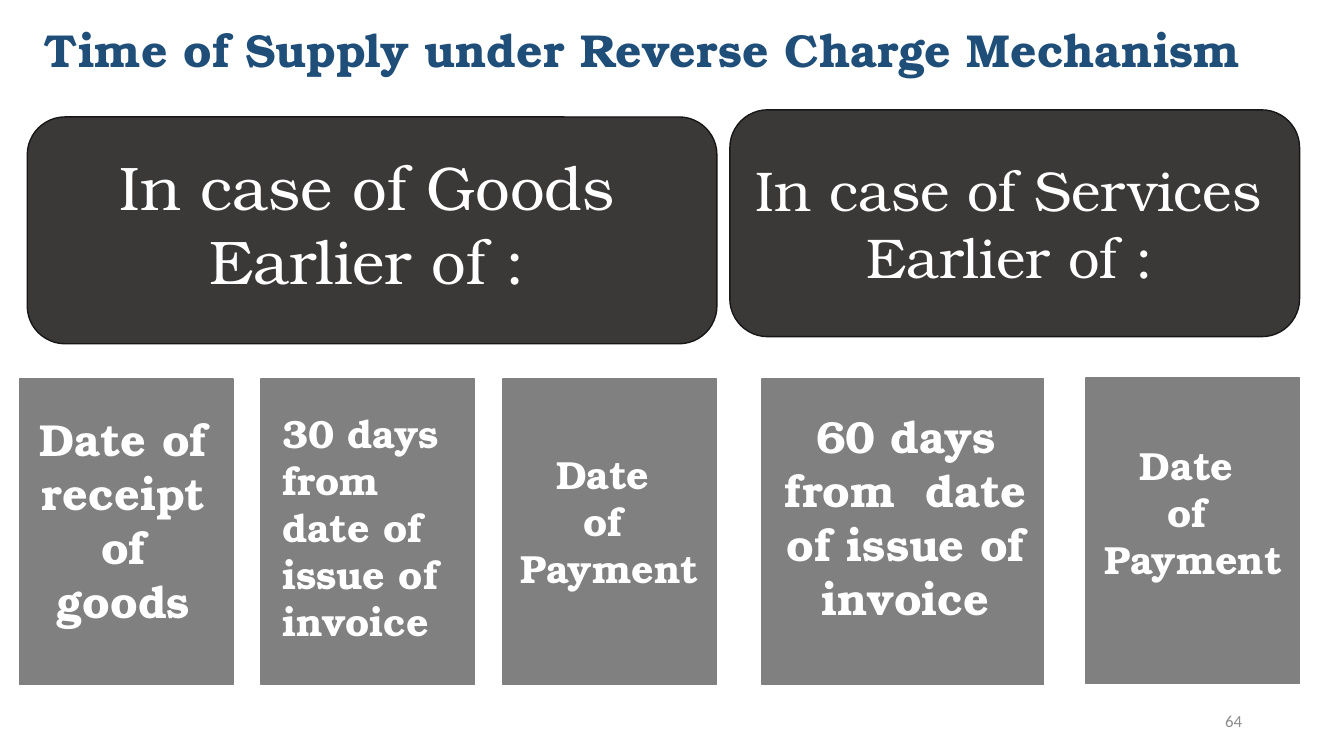
"""Builds a slide on the time of supply under the reverse charge mechanism."""
from dataclasses import dataclass

from pptx import Presentation
from pptx import util as u
from pptx.dml.color import RGBColor
from pptx.enum import shapes, text


@dataclass(frozen=True)
class Theme:
    """Colours, fonts and type sizes of the slide."""
    serif: str = "TeX Gyre Bonum"
    sans: str = "Calibri"
    title: str = "1F4E79"
    light: str = "FFFFFF"
    muted: str = "8C8C8C"
    banner: str = "3B3838"
    banner_edge: str = "181717"
    card: str = "808080"
    title_size: int = 33
    goods_size: int = 44
    services_size: int = 40
    large: int = 32
    medium: int = 28
    small: int = 12


LEFT, CENTER, RIGHT = text.PP_ALIGN.LEFT, text.PP_ALIGN.CENTER, text.PP_ALIGN.RIGHT
TOP, MIDDLE = text.MSO_ANCHOR.TOP, text.MSO_ANCHOR.MIDDLE


class SlideBuilder:
    """Places styled elements by percentages of the slide's size."""

    def __init__(self, deck, theme):
        """Adds a title-only slide to the deck."""
        self.deck, self.theme = deck, theme
        self.slide = deck.slides.add_slide(deck.slide_layouts[5])

    def box(self, left, top, width, height):
        """Turns percentages into slide lengths."""
        across, down = self.deck.slide_width / 100, self.deck.slide_height / 100
        return [int(n) for n in (left * across, top * down, width * across, height * down)]

    def set_words(self, shape, words, size, color, bold=False, align=CENTER, font=None,
                  anchor=TOP):
        """Fills a shape with paragraphs in one style."""
        frame = shape.text_frame
        frame.text = words
        frame.word_wrap = True
        frame.auto_size = text.MSO_AUTO_SIZE.NONE
        frame.vertical_anchor = anchor
        for paragraph in frame.paragraphs:
            paragraph.alignment = align
            paragraph.font.name = font or self.theme.serif
            paragraph.font.size = u.Pt(size)
            paragraph.font.bold = bold
            paragraph.font.color.rgb = RGBColor.from_string(color)
        return frame

    def title(self, place, words):
        """Moves and formats the title placeholder."""
        heading = self.slide.shapes.title
        heading.left, heading.top, heading.width, heading.height = self.box(*place)
        self.set_words(heading, words, self.theme.title_size, self.theme.title, bold=True)

    def panel(self, kind, place, fill, edge):
        """Draws a filled and outlined panel."""
        panel = self.slide.shapes.add_shape(kind, *self.box(*place))
        panel.shadow.inherit = False
        panel.fill.solid()
        panel.fill.fore_color.rgb = RGBColor.from_string(fill)
        panel.line.color.rgb = RGBColor.from_string(edge)
        panel.line.width = u.Pt(1)

    def banner(self, place):
        """Draws a rounded heading panel."""
        self.panel(shapes.MSO_SHAPE.ROUNDED_RECTANGLE, place,
                   self.theme.banner, self.theme.banner_edge)

    def card(self, place):
        """Draws a square-cornered condition panel."""
        self.panel(shapes.MSO_SHAPE.RECTANGLE, place, self.theme.card, self.theme.card)

    def label(self, place, words, size, color=None, **style):
        """Adds a text box."""
        label = self.slide.shapes.add_textbox(*self.box(*place))
        return self.set_words(label, words, size, color or self.theme.light, **style)


def main():
    """Builds and saves the slide."""
    deck = Presentation()
    deck.slide_width, deck.slide_height = u.Inches(13.33), u.Inches(7.5)
    theme = Theme()
    page = SlideBuilder(deck, theme)

    page.title((2.03, 2.13, 92.72, 8.8), "Time of Supply under Reverse Charge Mechanism ")
    page.label((70.67, 92.67, 22.5, 5.33), "64", theme.small, theme.muted,
               align=RIGHT, font=theme.sans, anchor=MIDDLE)

    page.banner((2.03, 15.47, 51.31, 30))
    page.banner((54.31, 14.53, 42.39, 30))
    page.label((4.13, 19.07, 46.44, 21.07), "In case of Goods\nEarlier of :", theme.goods_size)
    services = page.label((55.51, 19.87, 39.23, 19.33), "In case of Services\nEarlier of :",
                          theme.services_size)
    services.paragraphs[0].alignment = LEFT

    card_top, card_width, card_height = 50.13, 15.9, 40.4
    for column in range(3):
        page.card((1.43 + 18 * column, card_top, card_width, card_height))
    page.card((56.71, card_top, 20.93, card_height))
    page.card((80.8, 50, card_width, card_height))

    payment = "Date \nof \nPayment"
    conditions = [
        ((2.03, 53.87, 14.33, 30.13), "Date of \nreceipt of\ngoods", theme.large, CENTER),
        ((20.26, 53.47, 14.33, 32.8), "30 days from date of issue of invoice", theme.medium, LEFT),
        ((37.51, 58.93, 15.68, 20.13), payment, theme.medium, CENTER),
        ((57.39, 53.47, 20.03, 30.13), "60 days from  date of issue of invoice",
         theme.large, CENTER),
        ((80.95, 57.73, 15.68, 20.13), payment, theme.medium, CENTER),
    ]
    for place, words, size, align in conditions:
        page.label(place, words, size, bold=True, align=align)

    deck.save("out.pptx")


if __name__ == "__main__":
    main()
